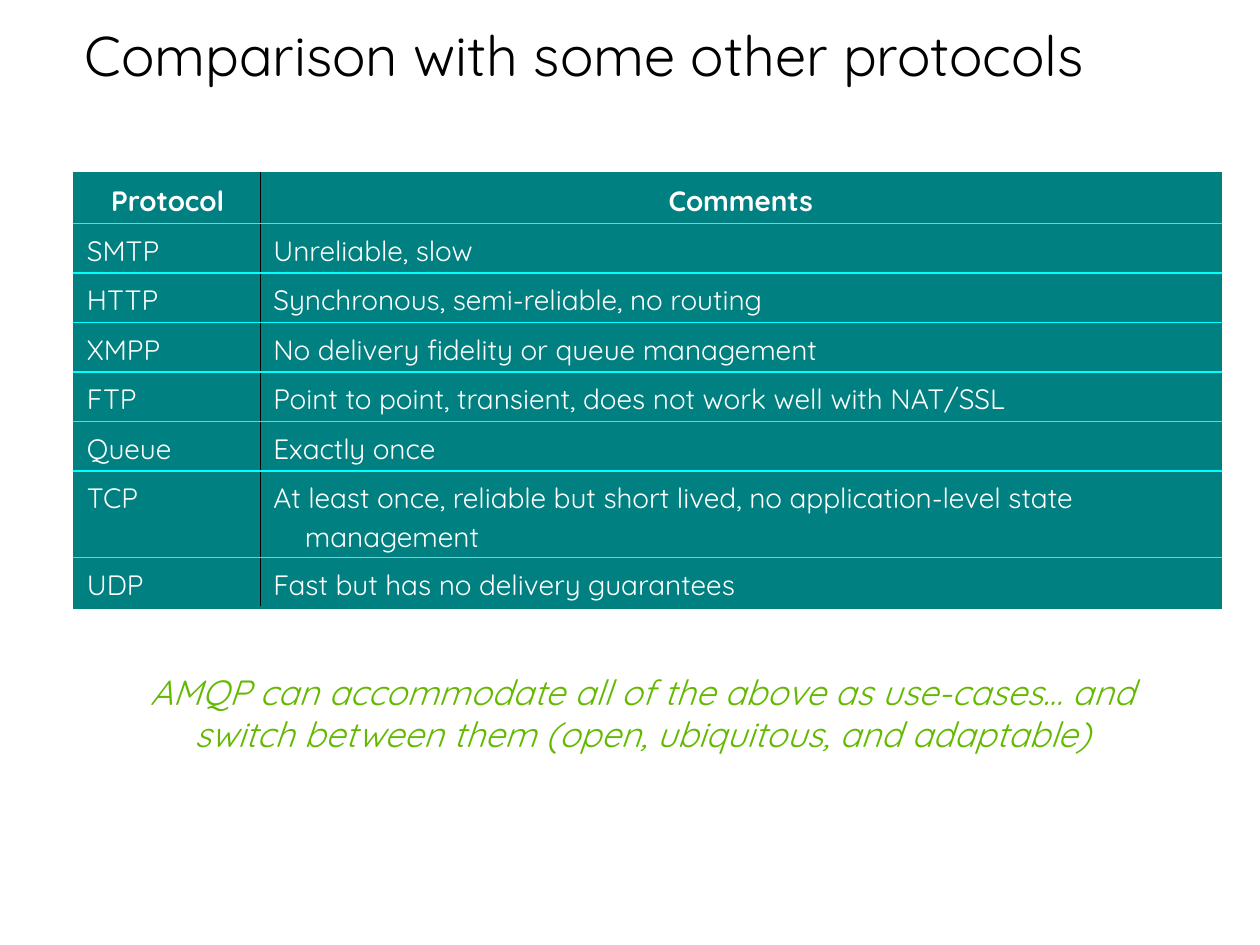
from dataclasses import dataclass
from lxml.etree import SubElement
from pptx import Presentation
from pptx.dml.color import RGBColor
from pptx.enum.text import MSO_ANCHOR, MSO_AUTO_SIZE, PP_ALIGN
from pptx.oxml.ns import qn
from pptx.util import Inches, Pt

W, H = Inches(10), Inches(7.5)
FONT = "Quicksand"
COLORS = {"black": "000000", "white": "FFFFFF", "teal": "008080",
          "cyan": "00FFFF", "green": "64B900"}
COLUMNS = (1.48, 7.62)
ROW, TALL_ROW = 0.39, 0.44


@dataclass(frozen=True)
class Protocol:
    name: str
    comment: str
    height: float = ROW


@dataclass(frozen=True)
class Border:
    color: str
    width: float


EDGE, RULE, DIVIDER = Border("teal", 2), Border("cyan", 1), Border("black", 0.75)

ROWS = (
    Protocol("Protocol", "Comments"),
    Protocol("SMTP", "Unreliable, slow"),
    Protocol("HTTP", "Synchronous, semi-reliable, no routing"),
    Protocol("XMPP", "No delivery fidelity or queue management"),
    Protocol("FTP", "Point to point, transient, does not work well with NAT/SSL"),
    Protocol("Queue", "Exactly once"),
    Protocol("TCP", "At least once, reliable but short lived, "
             "no application-level state management", TALL_ROW),
    Protocol("UDP", "Fast but has no delivery guarantees"),
)


def write(tf, text: str, *, size: float, color: str, align=PP_ALIGN.LEFT,
          bold: bool = False, italic: bool = False, line: float = 1.0,
          before: int = 0, after: int = 0, hanging: float = 0) -> None:
    """Write one formatted paragraph; before and after are percentages of a line."""
    p = tf.paragraphs[0]
    p.alignment = align
    p.line_spacing = line
    pPr = p._p.get_or_add_pPr()
    for tag, share in (("a:spcBef", before), ("a:spcAft", after)):
        SubElement(SubElement(pPr, qn(tag)), qn("a:spcPct")).set("val", str(share * 1000))
    if hanging:
        pPr.set("marL", str(Inches(hanging)))
        pPr.set("indent", str(-Inches(hanging)))
    r = p.add_run()
    r.text = text
    r.font.name, r.font.size = FONT, Pt(size)
    r.font.bold, r.font.italic = bold, italic
    r.font.color.rgb = RGBColor.from_string(COLORS[color])


def set_borders(cell, **borders: Border) -> None:
    """Draw the borders of a cell, given in the order L, R, T, B."""
    tcPr = cell._tc.get_or_add_tcPr()
    for i, (side, border) in enumerate(borders.items()):
        ln = tcPr.makeelement(qn(f"a:ln{side}"), {"w": str(Pt(border.width))})
        fill = SubElement(ln, qn("a:solidFill"))
        SubElement(fill, qn("a:srgbClr")).set("val", COLORS[border.color])
        tcPr.insert(i, ln)


def add_protocol_table(s, left: int, top: int) -> None:
    """Add the table of protocols with its header row."""
    height = sum(row.height for row in ROWS)
    table = s.shapes.add_table(len(ROWS), len(COLUMNS), left, top,
                               Inches(sum(COLUMNS)), Inches(height)).table
    table.first_row = table.horz_banding = False
    for column, width in zip(table.columns, COLUMNS):
        column.width = Inches(width)
    for i, row in enumerate(ROWS):
        table.rows[i].height = Inches(row.height)
        header = i == 0
        for j, text in enumerate((row.name, row.comment)):
            cell = table.cell(i, j)
            cell.fill.solid()
            cell.fill.fore_color.rgb = RGBColor.from_string(COLORS["teal"])
            set_borders(cell,
                        L=DIVIDER if j else EDGE,
                        R=EDGE if j else DIVIDER,
                        T=EDGE if header else RULE,
                        B=EDGE if i == len(ROWS) - 1 else RULE)
            write(cell.text_frame, text, size=16, color="white", bold=header,
                  align=PP_ALIGN.CENTER if header else PP_ALIGN.LEFT,
                  line=1.1, before=10, after=10, hanging=0.25)


def main() -> None:
    """Build the slide and save it."""
    prs = Presentation()
    prs.slide_width, prs.slide_height = W, H
    s = prs.slides.add_slide(prs.slide_layouts[5])

    title = s.shapes.title
    title.left, title.top = int(W * 0.047), int(H * 0.019)
    title.width, title.height = int(W * 0.834), int(H * 0.081)
    tf = title.text_frame
    tf.vertical_anchor, tf.auto_size = MSO_ANCHOR.BOTTOM, MSO_AUTO_SIZE.NONE
    write(tf, "Comparison with some other protocols", size=32, color="black",
          align=PP_ALIGN.CENTER, line=0.9)

    sp = s.shapes.add_textbox(int(W * 0.083), int(H * 0.703), int(W * 0.854), int(H * 0.103))
    tf = sp.text_frame
    tf.word_wrap, tf.auto_size = True, MSO_AUTO_SIZE.SHAPE_TO_FIT_TEXT
    write(tf, "AMQP can accommodate all of the above as use-cases… and switch "
          "between them (open, ubiquitous, and adaptable)", size=20, color="green",
          align=PP_ALIGN.CENTER, italic=True, before=20)

    add_protocol_table(s, int(W * 0.059), int(H * 0.184))
    prs.save("out.pptx")


if __name__ == "__main__":
    main()
